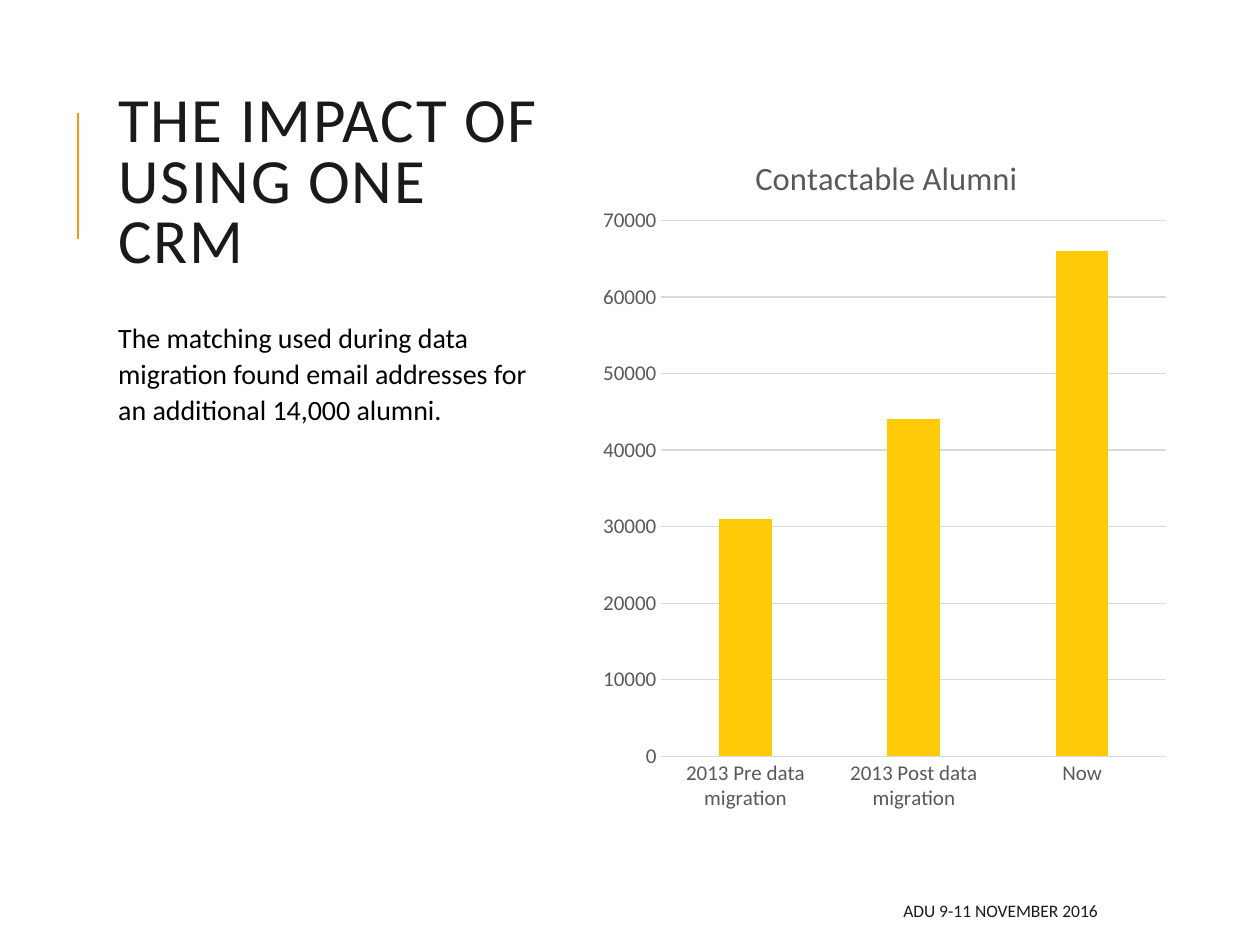
from dataclasses import dataclass

from lxml.etree import SubElement
from pptx import Presentation
from pptx.chart.data import CategoryChartData
from pptx.dml.color import RGBColor
from pptx.enum.chart import XL_CHART_TYPE, XL_TICK_MARK
from pptx.enum.shapes import MSO_CONNECTOR
from pptx.enum.text import MSO_ANCHOR, MSO_AUTO_SIZE, PP_ALIGN
from pptx.oxml import parse_xml
from pptx.oxml.ns import nsdecls, qn
from pptx.util import Inches, Pt


@dataclass(frozen=True)
class Theme:
    font: str = "Calibri"
    heading: RGBColor = RGBColor(0x1A, 0x1A, 0x1A)
    body: RGBColor = RGBColor(0, 0, 0)
    label: RGBColor = RGBColor(0x59, 0x59, 0x59)
    grid: RGBColor = RGBColor(0xD9, 0xD9, 0xD9)
    accent: RGBColor = RGBColor(0xF8, 0x93, 0x1D)
    bar: RGBColor = RGBColor(0xFF, 0xCA, 0x08)
    title_size: float = 36
    chart_title_size: float = 18.6
    body_size: float = 16
    label_size: float = 12
    footer_size: float = 10


def style_font(font, size, color):
    font.name = theme.font
    font.size = Pt(size)
    font.bold = False
    font.color.rgb = color


def manual_layout(**settings):
    """Return a c:layout element placed by shares of the chart area."""
    layout = parse_xml(f"<c:layout {nsdecls('c')}><c:manualLayout/></c:layout>")
    for tag, value in settings.items():
        SubElement(layout[0], qn(f"c:{tag}")).set("val", str(value))
    return layout


theme = Theme()
deck = Presentation()
deck.slide_width, deck.slide_height = Inches(10), Inches(7.5)
slide = deck.slides.add_slide(deck.slide_layouts[5])

# Two columns: wording on the left, chart on the right
text_left, text_width = Inches(0.84), Inches(3.6)
chart_left, chart_width = Inches(4.69), Inches(4.66)
rule_x, content_top = Inches(0.62), Inches(0.9)

accent_rule = slide.shapes.add_connector(
    MSO_CONNECTOR.STRAIGHT, rule_x, content_top + Inches(1), rule_x, content_top)
accent_rule.line.color.rgb = theme.accent
accent_rule.line.width = Pt(1.5)
SubElement(accent_rule.line._get_or_add_ln().getparent(), qn("a:effectLst"))

# Wording
title = slide.shapes.title
title.left, title.top = text_left, Inches(0.52)
title.width, title.height = text_width, Inches(1.9)
message = slide.shapes.add_textbox(text_left, Inches(2.47), text_width, Inches(4.11))
footer = slide.shapes.add_textbox(Inches(3.97), Inches(7.08), Inches(4.84), Inches(0.3))

wording = [
    (title, "THE IMPACT OF USING ONE CRM", theme.title_size, theme.heading,
     PP_ALIGN.LEFT, MSO_ANCHOR.MIDDLE),
    (message, "The matching used during data migration found email addresses "
     "for an additional 14,000 alumni.", theme.body_size, theme.body,
     PP_ALIGN.LEFT, MSO_ANCHOR.TOP),
    (footer, "ADU 9-11 NOVEMBER 2016", theme.footer_size, theme.heading,
     PP_ALIGN.RIGHT, MSO_ANCHOR.MIDDLE),
]
for holder, words, size, color, align, anchor in wording:
    frame = holder.text_frame
    frame.word_wrap = True
    frame.auto_size = MSO_AUTO_SIZE.NONE
    frame.vertical_anchor = anchor
    paragraph = frame.paragraphs[0]
    paragraph.alignment = align
    run = paragraph.add_run()
    run.text = words
    style_font(run.font, size, color)

heading = title.text_frame.paragraphs[0]
heading.line_spacing = 0.8
heading.runs[0].font._element.set("spc", "100")
statement = message.text_frame.paragraphs[0]
statement.line_spacing = 1.08
statement.space_before, statement.space_after = Pt(6), Pt(2)

# Chart
alumni = CategoryChartData(number_format="0")
alumni.categories = ["2013 Pre data migration", "2013 Post data migration", "Now"]
alumni.add_series("Series 1", [31000, 44000, 66000])
chart = slide.shapes.add_chart(
    XL_CHART_TYPE.COLUMN_CLUSTERED, chart_left, content_top,
    chart_width, Inches(5.67), alumni).chart
style_font(chart.font, theme.footer_size, theme.body)
chart.has_legend = False

chart.has_title = True
chart_title = chart.chart_title
chart_title.include_in_layout = False
caption = chart_title.text_frame.paragraphs[0].add_run()
caption.text = "Contactable Alumni"
style_font(caption.font, theme.chart_title_size, theme.label)

for axis in (chart.category_axis, chart.value_axis):
    axis.major_tick_mark = axis.minor_tick_mark = XL_TICK_MARK.NONE
    style_font(axis.tick_labels.font, theme.label_size, theme.label)

counts = chart.value_axis
counts.minimum_scale, counts.maximum_scale, counts.major_unit = 0, 70000, 10000
counts.tick_labels.number_format = "0"
counts.tick_labels.number_format_is_linked = False
counts.format.line.fill.background()
for line in (chart.category_axis.format.line, counts.major_gridlines.format.line):
    line.color.rgb = theme.grid
    line.width = Pt(0.75)

columns = chart.plots[0]
columns.vary_by_categories = False
columns.gap_width, columns.overlap = 219, -27
fill = columns.series[0].format.fill
fill.solid()
fill.fore_color.rgb = theme.bar

# Places of the chart title and of the plot inside the chart area
for old in chart_title._element.findall(qn("c:layout")):
    chart_title._element.remove(old)
chart_title._element.find(qn("c:tx")).addnext(
    manual_layout(xMode="edge", yMode="edge", x=0.27, y=0.05))
plot_area = chart._chartSpace.chart.plotArea
for old in plot_area.findall(qn("c:layout")):
    plot_area.remove(old)
plot_area.insert(0, manual_layout(
    layoutTarget="inner", xMode="edge", yMode="edge", x=0.12, y=0.15, w=0.86, h=0.75))

deck.save("out.pptx")
